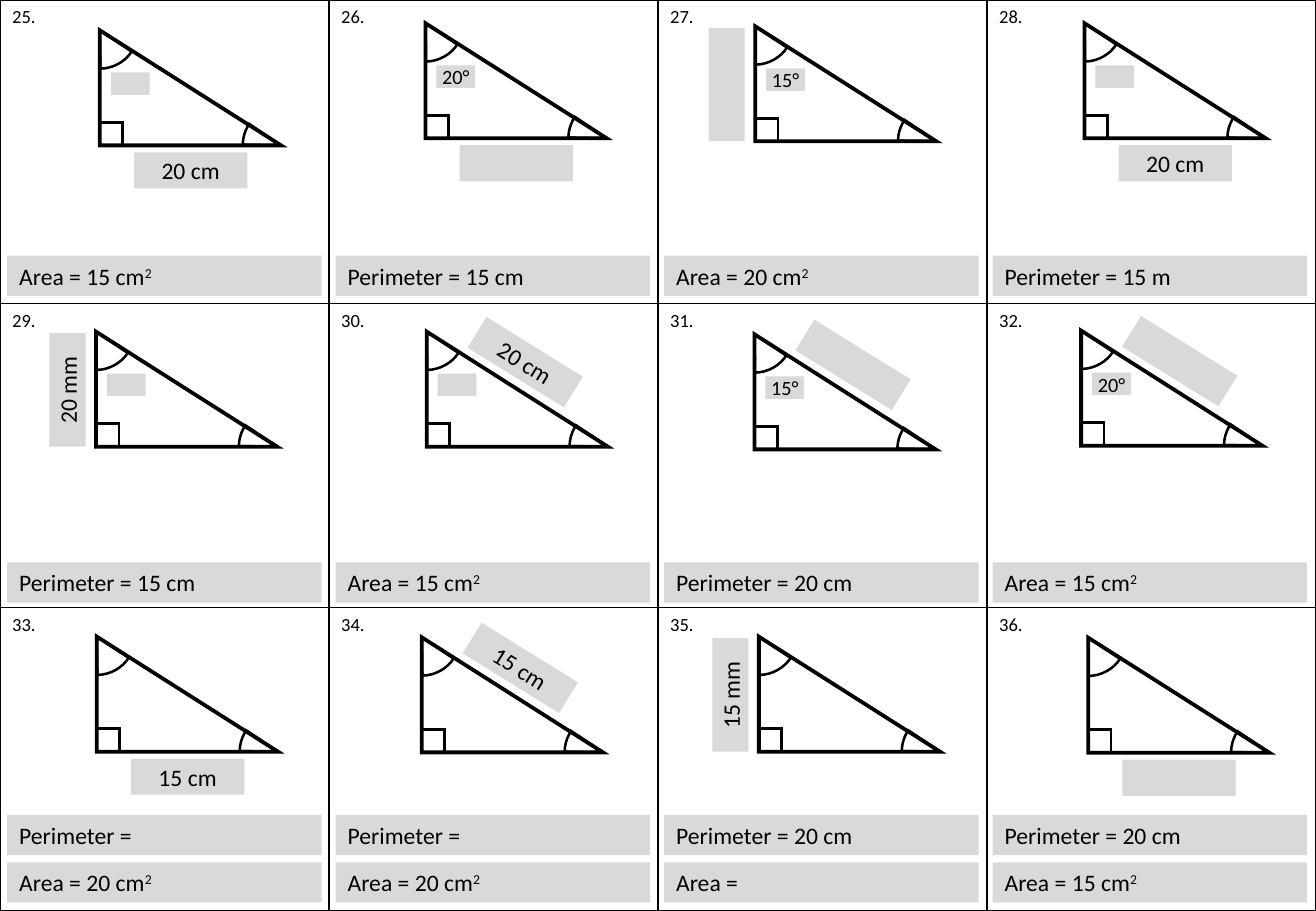
from lxml.etree import SubElement
from pptx import Presentation
from pptx.dml.color import RGBColor
from pptx.enum.shapes import MSO_SHAPE as Shape
from pptx.enum.text import MSO_ANCHOR as Anchor, PP_ALIGN as Align
from pptx.oxml import parse_xml
from pptx.oxml.ns import nsdecls, qn
from pptx.util import Pt

WIDTH, HEIGHT = 780, 540
COLUMNS, ROWS = 4, 3
FIRST_NUMBER = 25
BAR_TOPS = [[151.6], [333.4], [483.1, 511.2]]

SIDES = {
    "base": (20.2, 72.3, 0),
    "height": (-50.5, 23.8, 270),
    "slope": (24.8, 7.4, 31.8),
}

CARDS = [
    (59.2, 18, "base", "20 cm", "", ["Area = 15 cm^2"]),
    (252.2, 13.8, "base", "", "20°", ["Perimeter = 15 cm"]),
    (447.6, 15.6, "height", "", "15°", ["Area = 20 cm^2"]),
    (642.8, 13.8, "base", "20 cm", "", ["Perimeter = 15 m"]),
    (56.9, 196.6, "height", "20 mm", "", ["Perimeter = 15 cm"]),
    (252.9, 196.6, "slope", "20 cm", "", ["Area = 15 cm^2"]),
    (447.2, 198.2, "slope", "", "15°", ["Perimeter = 20 cm"]),
    (640.8, 196, "slope", "", "20°", ["Area = 15 cm^2"]),
    (57.4, 377.4, "base", "15 cm", None, ["Perimeter =", "Area = 20 cm^2"]),
    (250, 377.8, "slope", "15 cm", None, ["Perimeter =", "Area = 20 cm^2"]),
    (449.8, 377.4, "height", "15 mm", None, ["Perimeter = 20 cm", "Area ="]),
    (645, 378, "base", "", None, ["Perimeter = 20 cm", "Area = 15 cm^2"]),
]


def color(code):
    return RGBColor.from_string(code)


def write(frame, text, size=14, align=Align.LEFT, font="Calibri", ink="000000"):
    para = frame.paragraphs[0]
    para.alignment = align
    body, _, power = text.partition("^")
    for part in filter(None, (body, power)):
        span = para.add_run()
        span.text = part
        span.font.name = font
        span.font.size = Pt(size)
        span.font.bold = False
        span.font.color.rgb = color(ink)
        if part is power:
            span._r.get_or_add_rPr().set("baseline", "30000")


class Worksheet:
    ink = "000000"
    gray = "D9D9D9"

    def __init__(self, page):
        self.page = page

    def grid(self):
        frame = self.page.shapes.add_table(ROWS, COLUMNS, 0, 0, Pt(WIDTH), Pt(HEIGHT))
        table = frame.table
        table.first_row = table.horz_banding = False
        for column in table.columns:
            column.width = Pt(WIDTH / COLUMNS)
        for row in table.rows:
            row.height = Pt(HEIGHT / ROWS)
        for number, cell in enumerate(table.iter_cells(), FIRST_NUMBER):
            write(cell.text_frame, f"{number}.", size=11)
            cell.fill.background()
            properties = cell._tc.get_or_add_tcPr()
            for index, side in enumerate("LRTB"):
                border = parse_xml(
                    f'<a:ln{side} {nsdecls("a")} w="{Pt(1)}"><a:solidFill>'
                    f'<a:srgbClr val="{self.ink}"/></a:solidFill></a:ln{side}>')
                properties.insert(index, border)

    def outline(self, home, kind, left, top, width, height, weight=1.5, angles=()):
        shape = home.shapes.add_shape(kind, Pt(left), Pt(top), Pt(width), Pt(height))
        shape.shadow.inherit = False
        shape.fill.background()
        shape.line.color.rgb = color(self.ink)
        shape.line.width = Pt(weight)
        SubElement(shape.line._get_or_add_ln(), qn("a:miter"), lim="800000")
        for index, angle in enumerate(angles):
            shape.adjustments[index] = angle

    def label(self, home, text, left, top, width, height, turn=0, inset=7.2, **style):
        box = home.shapes.add_shape(Shape.RECTANGLE, Pt(left), Pt(top), Pt(width), Pt(height))
        box.shadow.inherit = False
        box.rotation = turn
        box.fill.solid()
        box.fill.fore_color.rgb = color(self.gray)
        box.line.fill.background()
        frame = box.text_frame
        frame.word_wrap = True
        frame.vertical_anchor = Anchor.MIDDLE
        frame.margin_left = frame.margin_right = Pt(inset)
        write(frame, text, **style)

    def triangle(self, left, top, side, length, angle):
        group = self.page.shapes.add_group_shape()
        width, height, corner, arc = 107.4, 68.2, 13.6, 45.4
        self.outline(group, Shape.RIGHT_TRIANGLE, left, top, width, height, weight=2.25)
        self.outline(group, Shape.RECTANGLE, left, top + height - corner, corner, corner)
        self.outline(group, Shape.PIE, left + width - arc / 2, top + height - arc / 2,
                     arc, arc, angles=(108.574, 128.349))
        self.outline(group, Shape.PIE, left - arc / 2, top - arc / 2,
                     arc, arc, angles=(20.209, 53.518))
        across, down, turn = SIDES[side]
        self.label(group, length, left + across, top + down, 67.2, 21.4,
                   turn=turn, align=Align.CENTER)
        if angle is not None:
            self.label(group, angle, left + 6.5, top + 24.9, 23, 13.4,
                       inset=0, size=12, align=Align.CENTER)

    def answers(self, index, texts):
        row, column = divmod(index, COLUMNS)
        for top, text in zip(BAR_TOPS[row], texts):
            self.label(self.page, text, 4.3 + 194.7 * column, top, 186.4, 23.8)


def main():
    deck = Presentation()
    deck.slide_width, deck.slide_height = Pt(WIDTH), Pt(HEIGHT)
    sheet = Worksheet(deck.slides.add_slide(deck.slide_layouts[6]))
    sheet.grid()
    for index, (left, top, side, length, angle, texts) in enumerate(CARDS):
        sheet.triangle(left, top, side, length, angle)
        sheet.answers(index, texts)
    deck.save("out.pptx")


if __name__ == "__main__":
    main()
